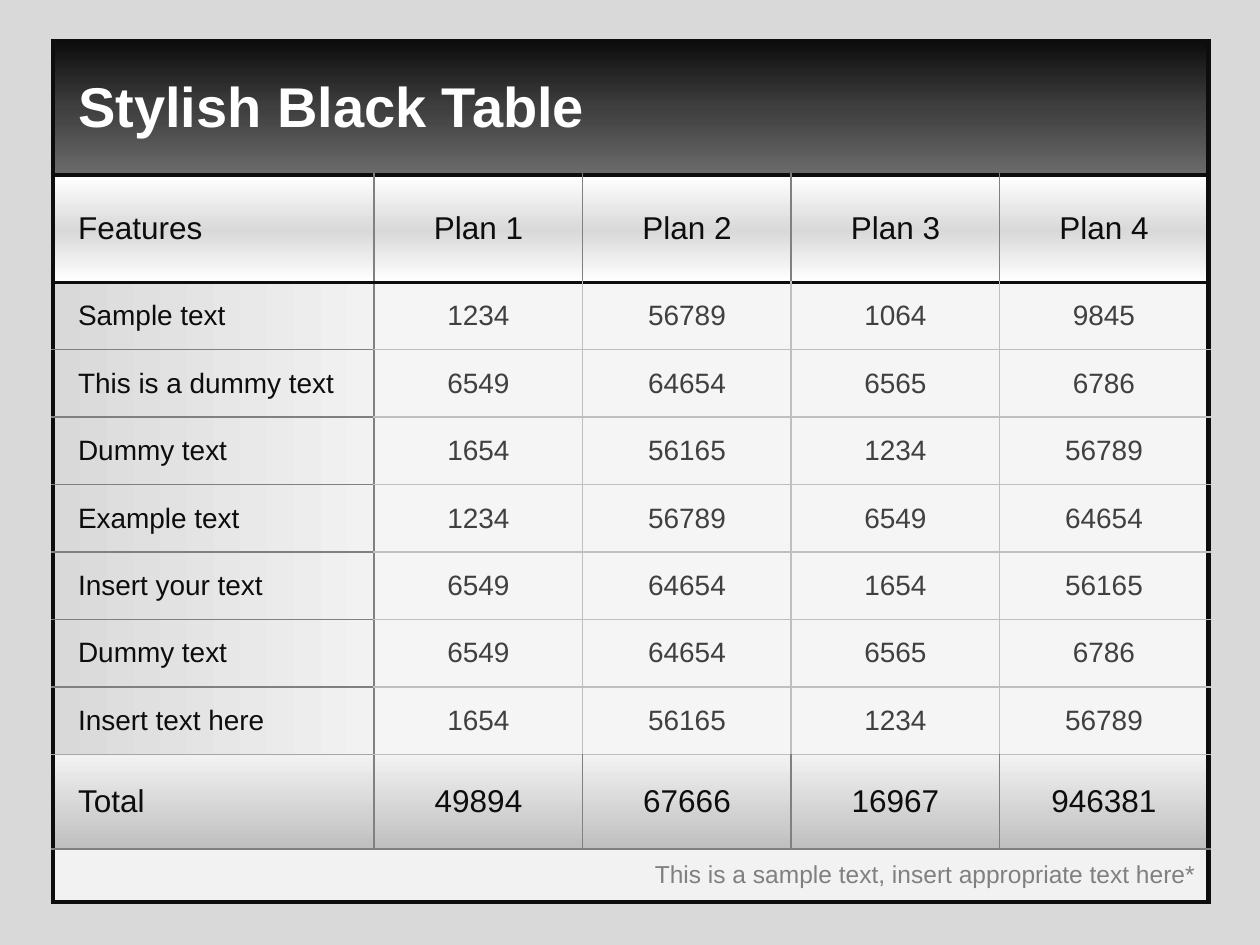
from lxml import etree
from pptx import Presentation
from pptx.dml.color import RGBColor
from pptx.enum.text import MSO_ANCHOR, PP_ALIGN
from pptx.oxml.ns import qn
from pptx.util import Inches, Pt

LEFT, CENTER, RIGHT = PP_ALIGN.LEFT, PP_ALIGN.CENTER, PP_ALIGN.RIGHT
MIDDLE = MSO_ANCHOR.MIDDLE

INK = RGBColor(0x0D, 0x0D, 0x0D)
CHARCOAL = RGBColor(0x3F, 0x3F, 0x3F)
FIGURE = RGBColor(0x40, 0x40, 0x40)
SLATE = RGBColor(0x6B, 0x6B, 0x6B)
GRAY = RGBColor(0x80, 0x80, 0x80)
ASH = RGBColor(0xA6, 0xA6, 0xA6)
SILVER = RGBColor(0xBF, 0xBF, 0xBF)
BACKDROP = RGBColor(0xD9, 0xD9, 0xD9)
PALE = RGBColor(0xF2, 0xF2, 0xF2)
PAPER = RGBColor(0xF5, 0xF5, 0xF5)
WHITE = RGBColor(0xFF, 0xFF, 0xFF)

EDGE, RULE = (INK, 3), (INK, 2.25)
TITLE_FILL = ([(0, INK), (50, CHARCOAL), (100, SLATE)], 90)
HEADER_FILL = ([(0, WHITE), (52, BACKDROP), (100, WHITE)], 90)
LABEL_FILL = ([(0, BACKDROP), (100, PALE)], 0)
TOTAL_FILL = ([(0, SILVER), (100, PALE)], 270)

ROWS = [
    ["Stylish Black Table"],
    ["Features", "Plan 1", "Plan 2", "Plan 3", "Plan 4"],
    ["Sample text", "1234", "56789", "1064", "9845"],
    ["This is a dummy text", "6549", "64654", "6565", "6786"],
    ["Dummy text", "1654", "56165", "1234", "56789"],
    ["Example text", "1234", "56789", "6549", "64654"],
    ["Insert your text", "6549", "64654", "1654", "56165"],
    ["Dummy text", "6549", "64654", "6565", "6786"],
    ["Insert text here", "1654", "56165", "1234", "56789"],
    ["Total", "49894", "67666", "16967", "946381"],
    ["This is a sample text, insert appropriate text here*"],
]
TITLE, HEADER, TOTAL, FOOTNOTE = 0, 1, 9, 10
COLUMNS = 5
WIDTH, HEIGHT = 9.17, 6.83
LABEL_WIDTH = 2.55
PLAN_WIDTH = (WIDTH - LABEL_WIDTH) / (COLUMNS - 1)
SPECIAL_HEIGHTS = {TITLE: 1.06, HEADER: 0.85, TOTAL: 0.75, FOOTNOTE: 0.42}
BODY_HEIGHT = (HEIGHT - sum(SPECIAL_HEIGHTS.values())) / (len(ROWS) - len(SPECIAL_HEIGHTS))


def write_text(cell, text, size=16, color=INK, bold=False, align=CENTER, font="Arial"):
    para = cell.text_frame.paragraphs[0]
    para.alignment = align
    span = para.add_run()
    span.text = text
    span.font.name = font
    span.font.size = Pt(size)
    span.font.bold = bold
    span.font.color.rgb = color


def line_below(row, column):
    if row in (-1, FOOTNOTE):
        return EDGE
    if row in (TITLE, HEADER):
        return RULE
    if row == TOTAL:
        return GRAY, 1
    if column > 0:
        return SILVER, 1
    return (ASH if row == TOTAL - 1 else GRAY), 1


def line_beside(row, column):
    if column in (-1, COLUMNS - 1) or row in (TITLE, FOOTNOTE):
        return EDGE
    return (GRAY if column == 0 or row in (HEADER, TOTAL) else SILVER), 1


def cell_format(row, column):
    align = LEFT if column == 0 else CENTER
    if row == TITLE:
        return TITLE_FILL, dict(size=32, color=WHITE, bold=True, align=LEFT)
    if row == HEADER:
        return HEADER_FILL, dict(size=18, align=align)
    if row == TOTAL:
        return TOTAL_FILL, dict(size=18, align=align)
    if row == FOOTNOTE:
        return PALE, dict(size=14, color=GRAY, align=RIGHT)
    if column == 0:
        return LABEL_FILL, dict(align=align)
    return PAPER, dict(color=FIGURE)


class SlideBuilder:
    def __init__(self, deck):
        self.page = deck.slides.add_slide(deck.slide_layouts[6])

    def background(self, color):
        fill = self.page.background.fill
        fill.solid()
        fill.fore_color.rgb = color

    def color_node(self, parent, color):
        etree.SubElement(parent, qn("a:srgbClr"), val=str(color))

    def borders(self, cell, lines):
        properties = cell._tc.get_or_add_tcPr()
        for side, (color, width) in zip("LRTB", lines):
            line = etree.SubElement(properties, qn(f"a:ln{side}"), w=str(Pt(width)))
            self.color_node(etree.SubElement(line, qn("a:solidFill")), color)

    def paint(self, cell, fill):
        if isinstance(fill, RGBColor):
            cell.fill.solid()
            cell.fill.fore_color.rgb = fill
            return
        stops, angle = fill
        gradient = etree.SubElement(cell._tc.get_or_add_tcPr(), qn("a:gradFill"), rotWithShape="1")
        stop_list = etree.SubElement(gradient, qn("a:gsLst"))
        for position, color in stops:
            stop = etree.SubElement(stop_list, qn("a:gs"), pos=str(position * 1000))
            self.color_node(stop, color)
        etree.SubElement(gradient, qn("a:lin"), ang=str(angle * 60000), scaled="0")

    def cell(self, table, row, column, text):
        cell = table.cell(row, column)
        cell.vertical_anchor = MIDDLE
        if column == 0 and row != FOOTNOTE:
            cell.margin_left = Inches(0.2)
        self.borders(cell, [
            line_beside(row, column - 1), line_beside(row, column),
            line_below(row - 1, column), line_below(row, column),
        ])
        fill, style = cell_format(row, column)
        self.paint(cell, fill)
        write_text(cell, text, **style)

    def table(self, left, top):
        frame = self.page.shapes.add_table(
            len(ROWS), COLUMNS, Inches(left), Inches(top), Inches(WIDTH), Inches(HEIGHT))
        table = frame.table
        table.first_row = False
        table.horz_banding = False
        for index, column in enumerate(table.columns):
            column.width = Inches(PLAN_WIDTH if index else LABEL_WIDTH)
        for row, texts in enumerate(ROWS):
            table.rows[row].height = Inches(SPECIAL_HEIGHTS.get(row, BODY_HEIGHT))
            if len(texts) == 1:
                table.cell(row, 0).merge(table.cell(row, COLUMNS - 1))
            for column, text in enumerate(texts):
                self.cell(table, row, column, text)


def main():
    deck = Presentation()
    deck.slide_width = Inches(10)
    deck.slide_height = Inches(7.5)
    builder = SlideBuilder(deck)
    builder.background(BACKDROP)
    builder.table(0.42, 0.33)
    deck.save("out.pptx")


if __name__ == "__main__":
    main()
